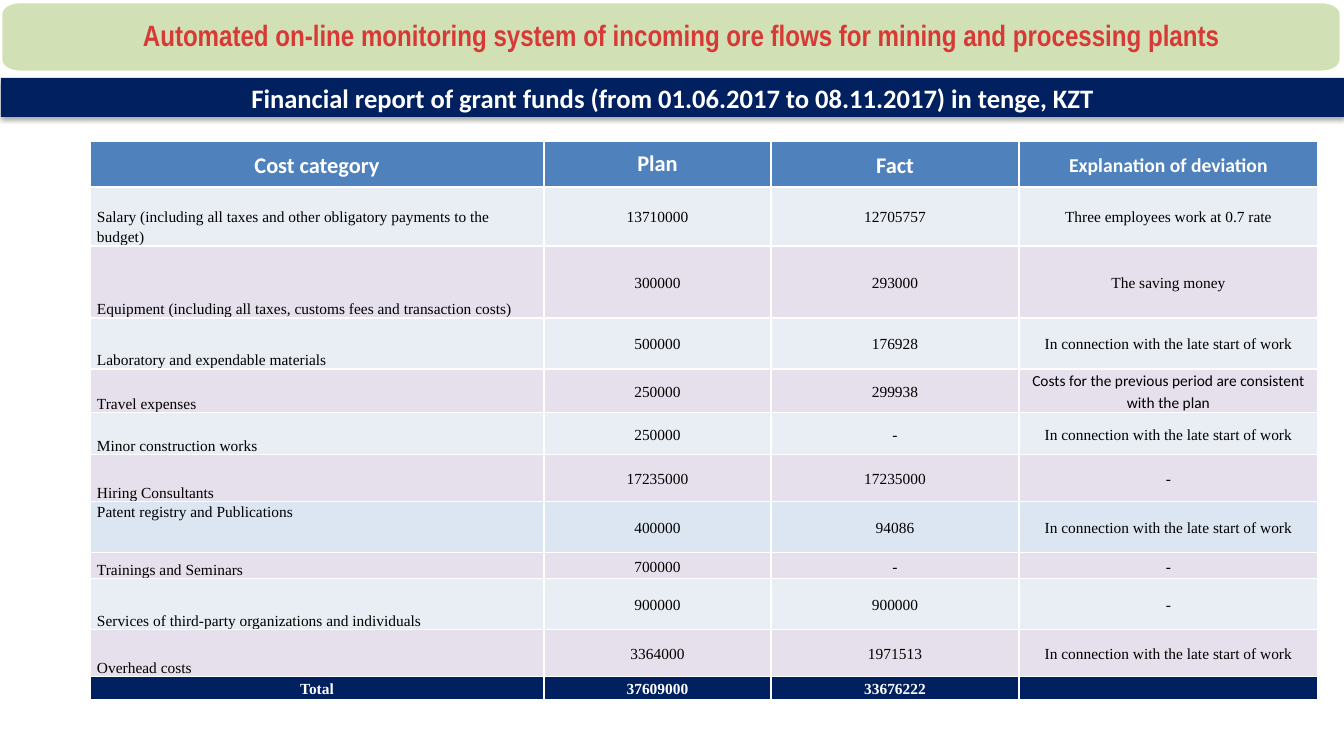
from dataclasses import dataclass
from math import cos, pi, sin

from lxml.etree import SubElement
from pptx import Presentation
from pptx.dml.color import RGBColor
from pptx.enum.text import MSO_ANCHOR, MSO_AUTO_SIZE, PP_ALIGN
from pptx.oxml import parse_xml
from pptx.oxml.ns import nsdecls, qn
from pptx.slide import Slide
from pptx.table import _Cell
from pptx.text.text import TextFrame
from pptx.util import Emu, Pt

EMU_PER_PX = 12192000 / 1344
COLORS = {
    "white": "FFFFFF", "black": "000000", "navy": "002060", "blue": "4F81BD",
    "mist": "E9EDF4", "lilac": "E6E0EC", "sky": "DCE6F2",
    "green": "D2E1B5", "red": "D73A36",
}
SERIF = "Times New Roman"
SANS = "Calibri"
LATE_START = "In connection with the late start of work"
COLUMN_WIDTHS = (454, 227, 248, 299)


@dataclass(frozen=True)
class CostRow:
    height: int
    texts: tuple[str, str, str, str]
    fill: str
    label_anchor: MSO_ANCHOR = MSO_ANCHOR.BOTTOM
    label_align: PP_ALIGN = PP_ALIGN.LEFT
    color: str = "black"
    bold: bool = False
    margin: int = 7
    fonts: tuple[str, ...] = (SERIF,) * 4
    sizes: tuple[int, ...] = (11,) * 4
    spacings: tuple[float, ...] = (1.15,) * 4


COST_ROWS = (
    CostRow(46, ("Cost category", "Plan", "Fact", "Explanation of deviation"), "blue",
            MSO_ANCHOR.MIDDLE, PP_ALIGN.CENTER, "white", True, 9,
            (SANS,) * 4, (16, 16, 16, 14), (1.15, 1.0, 1.15, 1.15)),
    CostRow(59, ("Salary (including all taxes and other obligatory payments to the budget)",
                 "13710000", "12705757", "Three employees work at 0.7 rate"), "mist"),
    CostRow(72, ("Equipment (including all taxes, customs fees and transaction costs)",
                 "300000", "293000", "The saving money"), "lilac"),
    CostRow(51, ("Laboratory and expendable materials", "500000", "176928", LATE_START), "mist"),
    CostRow(43, ("Travel expenses", "250000", "299938",
                 "Costs for the previous period are consistent with the plan"), "lilac",
            fonts=(SERIF, SERIF, SERIF, SANS)),
    CostRow(42, ("Minor construction works", "250000", "-", LATE_START), "mist"),
    CostRow(47, ("Hiring Consultants", "17235000", "17235000", "-"), "lilac"),
    CostRow(51, ("Patent registry and Publications", "400000", "94086", LATE_START), "sky",
            MSO_ANCHOR.TOP),
    CostRow(26, ("Trainings and Seminars", "700000", "-", "-"), "lilac"),
    CostRow(51, ("Services of third-party organizations and individuals",
                 "900000", "900000", "-"), "mist"),
    CostRow(47, ("Overhead costs", "3364000", "1971513", LATE_START), "lilac"),
    CostRow(23, ("Total", "37609000", "33676222", ""), "navy",
            MSO_ANCHOR.MIDDLE, PP_ALIGN.CENTER, "white", True),
)


def px(value: float) -> Emu:
    return Emu(round(value * EMU_PER_PX))


def rgb(name: str) -> RGBColor:
    return RGBColor.from_string(COLORS[name])


def write_text(frame: TextFrame, text: str, *, size: int, font: str, color: str,
               bold: bool = True, align: PP_ALIGN = PP_ALIGN.CENTER,
               spacing: float = 1.0) -> None:
    paragraph = frame.paragraphs[0]
    paragraph.alignment = align
    paragraph.line_spacing = spacing
    if not text:
        # An empty cell keeps its row low only with a small end mark
        paragraph._p.get_or_add_endParaRPr().set("sz", str(size * 100))
        return
    run = paragraph.add_run()
    run.text = text
    run.font.size = Pt(size)
    run.font.name = font
    run.font.bold = bold
    run.font.color.rgb = rgb(color)


def set_frame(frame: TextFrame, left: int, top: int, right: int, bottom: int) -> None:
    frame.word_wrap = True
    frame.auto_size = MSO_AUTO_SIZE.NONE
    frame.vertical_anchor = MSO_ANCHOR.MIDDLE
    frame.margin_left, frame.margin_top = px(left), px(top)
    frame.margin_right, frame.margin_bottom = px(right), px(bottom)


def add_report_title(slide: Slide) -> None:
    title = slide.shapes.title
    title.left, title.top, title.width, title.height = px(1), px(78), px(1343), px(39)
    title.fill.solid()
    title.fill.fore_color.rgb = rgb("navy")
    title._element.spPr.append(parse_xml(
        f'<a:effectLst {nsdecls("a")}><a:outerShdw blurRad="39370" dist="22860" '
        f'dir="5400000" rotWithShape="0"><a:srgbClr val="{COLORS["black"]}">'
        '<a:alpha val="35000"/></a:srgbClr></a:outerShdw></a:effectLst>'))
    set_frame(title.text_frame, 12, 6, 12, 6)
    write_text(title.text_frame,
               "Financial report of grant funds (from 01.06.2017 to 08.11.2017) in tenge, KZT",
               size=19, font=SANS, color="white")


def add_project_banner(slide: Slide) -> None:
    left, top, right, bottom = 1, 2, 1341, 72
    radius_x, radius_y, steps = 19, 12, 12
    corners = ((right - radius_x, bottom - radius_y), (left + radius_x, bottom - radius_y),
               (left + radius_x, top + radius_y), (right - radius_x, top + radius_y))
    points = []
    for quarter, (center_x, center_y) in enumerate(corners):
        for step in range(steps + 1):
            angle = (quarter + step / steps) * pi / 2
            points.append((px(center_x + radius_x * cos(angle)),
                           px(center_y + radius_y * sin(angle))))
    builder = slide.shapes.build_freeform(*points[0])
    builder.add_line_segments(points[1:], close=True)
    banner = builder.convert_to_shape()
    banner.shadow.inherit = False
    banner.fill.solid()
    banner.fill.fore_color.rgb = rgb("green")
    banner.line.color.rgb = rgb("white")
    banner.line.width = Pt(2)
    set_frame(banner.text_frame, 33, 12, 12, 12)
    write_text(banner.text_frame,
               "Automated on-line monitoring system of incoming ore flows "
               "for mining and processing plants",
               size=21, font="Arial Narrow", color="red", spacing=0.9)


def style_cell(cell: _Cell, fill: str, margin: int, anchor: MSO_ANCHOR) -> None:
    properties = cell._tc.get_or_add_tcPr()
    for side in ("a:lnL", "a:lnR", "a:lnT", "a:lnB"):
        border = SubElement(properties, qn(side), w=str(Pt(1)))
        border_fill = SubElement(border, qn("a:solidFill"))
        SubElement(border_fill, qn("a:srgbClr"), val=COLORS["white"])
    cell.fill.solid()
    cell.fill.fore_color.rgb = rgb(fill)
    cell.margin_left = cell.margin_right = px(margin)
    cell.margin_top = cell.margin_bottom = 0
    cell.vertical_anchor = anchor


def add_cost_table(slide: Slide) -> None:
    height = sum(row.height for row in COST_ROWS)
    table = slide.shapes.add_table(len(COST_ROWS), len(COLUMN_WIDTHS), px(90), px(141),
                                   px(sum(COLUMN_WIDTHS)), px(height)).table
    for column, width in zip(table.columns, COLUMN_WIDTHS):
        column.width = px(width)
    for row_index, row in enumerate(COST_ROWS):
        table.rows[row_index].height = px(row.height)
        for column_index, text in enumerate(row.texts):
            is_label = column_index == 0
            cell = table.cell(row_index, column_index)
            style_cell(cell, row.fill, row.margin,
                       row.label_anchor if is_label else MSO_ANCHOR.MIDDLE)
            write_text(cell.text_frame, text, size=row.sizes[column_index],
                       font=row.fonts[column_index], color=row.color, bold=row.bold,
                       align=row.label_align if is_label else PP_ALIGN.CENTER,
                       spacing=row.spacings[column_index])


def main() -> None:
    presentation = Presentation()
    presentation.slide_width, presentation.slide_height = px(1344), px(756)
    slide = presentation.slides.add_slide(presentation.slide_layouts[5])
    add_report_title(slide)
    add_project_banner(slide)
    add_cost_table(slide)
    presentation.save("out.pptx")


if __name__ == "__main__":
    main()
